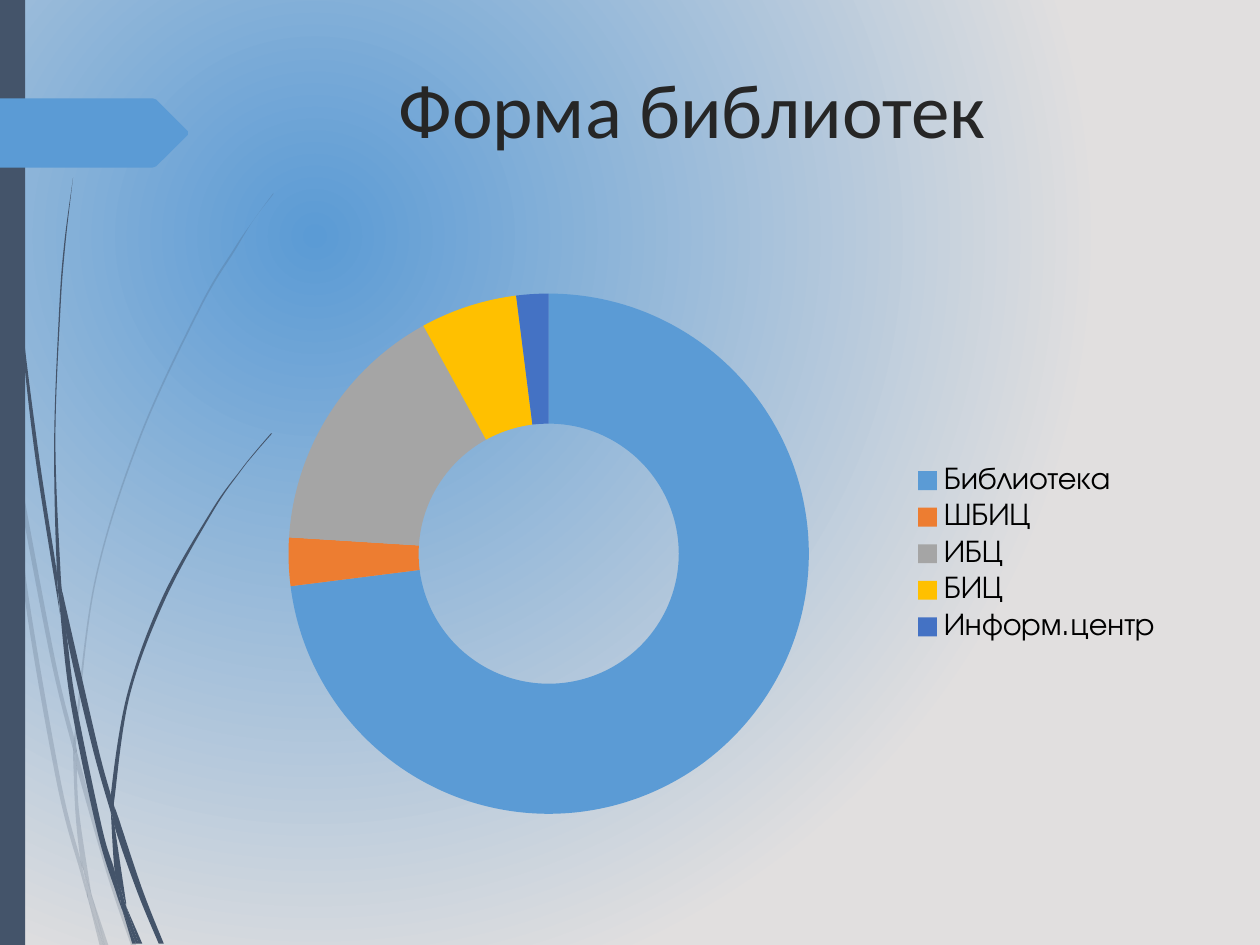
from dataclasses import dataclass

from lxml.etree import SubElement
from pptx import Presentation
from pptx.chart.data import CategoryChartData
from pptx.dml.color import RGBColor as RGB
from pptx.enum.chart import XL_CHART_TYPE as CT, XL_LEGEND_POSITION as LP
from pptx.enum.shapes import MSO_SHAPE as MS
from pptx.enum.text import MSO_ANCHOR as MA, PP_ALIGN as PA
from pptx.oxml.ns import qn
from pptx.util import Inches, Pt

Point = tuple[float, float]

COLORS = {
    "blue": "5B9BD5",
    "pale": "E1DFDF",
    "slate": "44546A",
    "title": "262626",
    "legend": "000000",
    "orange": "ED7D31",
    "gray": "A5A5A5",
    "gold": "FFC000",
    "indigo": "4472C4",
}


@dataclass
class Blade:
    down: list[Point]
    back: list[Point]


@dataclass
class Slice:
    name: str
    value: int
    color: str


FAINT_BLADES = [
    Blade([(0.08, 3.5), (0.06, 3.22), (0, 2.82)], [(0, 2.99), (0.07, 3.44), (0.08, 3.5)]),
    Blade([(0.12, 3.76), (0.4, 5.22), (0.59, 5.99)], [(0.59, 5.86), (0.43, 5.2), (0.1, 3.45)]),
    Blade([(0.61, 6.1), (0.85, 6.94), (1.04, 7.5)],
          [(1.08, 7.5), (0.88, 6.92), (0.64, 6.07), (0.61, 5.96)]),
    Blade([(0.73, 7.11), (0.83, 7.5)], [(0.86, 7.5), (0.73, 7.11)]),
    Blade([(0.08, 3.5), (0.19, 4.7), (0.45, 6.21), (0.64, 6.93), (0.7, 7.14)],
          [(0.7, 7.14), (0.69, 7.07), (0.64, 6.83), (0.48, 6.19), (0.22, 4.69), (0.12, 3.76), (0.08, 3.5)]),
    Blade([(0.58, 5.99), (0.6, 6.46), (0.64, 6.83), (0.67, 6.92), (0.73, 7.11)],
          [(0.73, 7.11), (0.72, 7.06), (0.63, 6.46), (0.61, 6.1), (0.61, 6.08), (0.58, 5.99)]),
    Blade([(0.61, 5.96), (0.61, 5.84), (0.76, 4.62), (1.11, 3.49), (1.59, 2.45), (1.87, 1.98), (2.01, 1.75),
           (2.17, 1.54)],
          [(2.17, 1.53), (2.01, 1.75), (1.86, 1.97), (1.58, 2.44), (1.1, 3.48), (0.75, 4.61), (0.59, 5.84),
           (0.59, 5.86), (0.61, 5.96)]),
    Blade([(0.7, 7.14), (0.79, 7.5)], [(0.82, 7.5), (0.7, 7.14)]),
    Blade([(0.61, 6.08), (0.61, 6.1), (0.61, 5.96), (0.59, 5.86)], [(0.58, 5.99), (0.61, 6.08)]),
    Blade([(0.65, 6.83), (0.69, 7.07), (0.7, 7.14), (0.82, 7.5)],
          [(0.83, 7.5), (0.73, 7.11), (0.67, 6.92), (0.65, 6.83)]),
]

SOLID_BLADES = [
    Blade([(0.03, 0.48), (0.05, 1.1), (0.14, 2.33), (0.27, 3.55), (0.46, 4.77), (0.47, 4.81)],
          [(0.45, 4.57), (0.45, 4.53), (0.3, 3.55), (0.15, 2.32), (0.06, 1.09), (0.04, 0.48), (0.03, 0),
           (0.02, 0)]),
    Blade([(0.5, 4.72), (0.53, 5.05), (0.73, 5.92), (0.88, 6.45)],
          [(0.88, 6.33), (0.88, 6.31), (0.77, 5.9), (0.5, 4.72)]),
    Blade([(0.91, 6.41), (0.91, 6.56), (1.09, 7.08), (1.26, 7.49)],
          [(1.3, 7.49), (1.13, 7.06), (0.94, 6.49), (0.91, 6.41)]),
    Blade([(0.47, 4.77), (0.56, 5.57), (0.77, 6.59), (0.92, 7.08), (0.97, 7.22)],
          [(0.96, 7.17), (0.91, 6.91), (0.81, 6.57), (0.6, 5.56), (0.53, 5.05), (0.47, 4.77)]),
    Blade([(0.5, 4.72), (0.48, 4.53), (0.44, 3.49), (0.48, 2.45), (0.52, 1.93), (0.58, 1.41)],
          [(0.58, 1.41), (0.51, 1.93), (0.47, 2.45), (0.43, 3.49), (0.45, 4.49), (0.49, 4.72), (0.5, 4.72)]),
    Blade([(1, 7.19), (1.1, 7.49)], [(1.13, 7.49), (1, 7.19)]),
    Blade([(0.45, 4.53), (0.47, 4.77), (0.53, 5.05)],
          [(0.53, 5.05), (0.5, 4.72), (0.49, 4.72), (0.45, 4.49)]),
    Blade([(0.91, 6.41), (0.91, 6.33), (1.03, 5.52), (1.31, 4.76), (1.69, 4.06), (1.91, 3.74), (2.03, 3.59),
           (2.16, 3.44)],
          [(2.15, 3.44), (2.03, 3.58), (1.91, 3.73), (1.68, 4.05), (1.29, 4.74), (1.01, 5.51), (0.88, 6.31),
           (0.91, 6.41)]),
    Blade([(0.97, 7.22), (1.05, 7.49)], [(1.08, 7.49), (0.97, 7.22)]),
    Blade([(0.88, 6.45), (0.91, 6.91), (0.96, 7.06), (1, 7.19)],
          [(1, 7.16), (0.91, 6.56), (0.9, 6.51), (0.88, 6.45)]),
    Blade([(0.88, 6.45), (0.9, 6.51), (0.91, 6.56)], [(0.91, 6.41), (0.88, 6.31), (0.88, 6.33), (0.88, 6.45)]),
    Blade([(0.91, 6.91), (0.96, 7.17), (0.97, 7.22), (1.08, 7.49)],
          [(1.1, 7.49), (1, 7.19), (0.96, 7.06), (0.91, 6.91)]),
]

ARROW = [(1.49, 1.07), (1.24, 1.32), (1.21, 1.33), (0, 1.33), (0, 0.78),
         (1.21, 0.78), (1.24, 0.79), (1.49, 1.04)]

SLICES = [
    Slice("Библиотека", 73, "blue"),
    Slice("ШБИЦ", 3, "orange"),
    Slice("ИБЦ", 16, "gray"),
    Slice("БИЦ", 6, "gold"),
    Slice("Информ.центр", 2, "indigo"),
]


def rgb(name: str) -> RGB:
    return RGB.from_string(COLORS[name])


def set_attrs(obj, values: dict) -> None:
    for key, value in values.items():
        setattr(obj, key, value)


def paint(sp, color: str, alpha: int = 100) -> None:
    sp.shadow.inherit = False
    sp.fill.solid()
    sp.fill.fore_color.rgb = rgb(color)
    sp.line.fill.background()
    if alpha < 100:
        clr = sp._element.spPr.find(".//" + qn("a:srgbClr"))
        SubElement(clr, qn("a:alpha"), val=str(alpha * 1000))


def add_outline(slide, points: list[Point]):
    pts = [(Inches(x), Inches(y)) for x, y in points]
    fb = slide.shapes.build_freeform(*pts[0])
    fb.add_line_segments(pts[1:], close=True)
    return fb.convert_to_shape()


def curve(side: list[Point]) -> list[Point]:
    ends = [side[0], *side, side[-1]]
    pts = []
    for a, b, c, d in zip(ends, ends[1:], ends[2:], ends[3:]):
        pts.append(tuple(b[k] + (c[k] - a[k]) / 6 for k in (0, 1)))
        pts.append(tuple(c[k] - (d[k] - b[k]) / 6 for k in (0, 1)))
        pts.append(c)
    return pts


def draw_blade(slide, blade: Blade, alpha: int) -> None:
    joint = [blade.down[-1], blade.back[0], blade.back[0]]
    if blade.down[-1] == blade.back[0]:
        joint = []
    sp = add_outline(slide, [blade.down[0], *curve(blade.down), *joint, *curve(blade.back)])
    lines = list(sp._element.iter(qn("a:lnTo")))
    for trio in zip(lines[::3], lines[1::3], lines[2::3]):
        bezier = trio[0].makeelement(qn("a:cubicBezTo"))
        trio[0].addprevious(bezier)
        for line in trio:
            bezier.append(line[0])
            line.getparent().remove(line)
    paint(sp, "slate", alpha)


def draw_background(slide) -> None:
    fill = slide.background.fill
    fill.gradient()
    for stop, color in zip(fill.gradient_stops, ("blue", "pale")):
        stop.color.rgb = rgb(color)
    grad = slide.element.find(".//" + qn("a:gradFill"))
    grad.remove(grad.find(qn("a:lin")))
    radial = SubElement(grad, qn("a:path"), path="circle")
    SubElement(radial, qn("a:fillToRect"), l="50000", t="50000", r="100000", b="100000")


def draw_title(slide, text: str) -> None:
    sp = slide.shapes.title
    set_attrs(sp, {"left": Inches(2.13), "top": Inches(0.44), "width": Inches(6.73), "height": Inches(1.1)})
    tf = sp.text_frame
    set_attrs(tf, {"text": text, "vertical_anchor": MA.TOP, "word_wrap": True})
    p = tf.paragraphs[0]
    p.alignment = PA.CENTER
    r = p.runs[0]
    set_attrs(r.font, {"name": "Calibri", "size": Pt(44)})
    r.font.color.rgb = rgb("title")


def draw_chart(slide, slices: list[Slice]) -> None:
    data = CategoryChartData()
    data.categories = [s.name for s in slices]
    data.add_series("Series 1", [s.value for s in slices])
    chart = slide.shapes.add_chart(CT.DOUGHNUT, Inches(2.12), Inches(2.33), Inches(7.21), Inches(4.13), data).chart
    set_attrs(chart, {"has_title": False, "has_legend": True})
    set_attrs(chart.font, {"name": "TeX Gyre Adventor", "size": Pt(18)})
    chart.font.color.rgb = rgb("legend")
    set_attrs(chart.legend, {"position": LP.RIGHT, "include_in_layout": True})
    plot = chart.plots[0]
    set_attrs(plot, {"vary_by_categories": True, "has_data_labels": False})
    for i, s in enumerate(slices):
        fmt = plot.series[0].points[i].format
        fmt.fill.solid()
        fmt.fill.fore_color.rgb = rgb(s.color)
        fmt.line.fill.background()
    area = chart.element.find(".//" + qn("c:plotArea"))
    for old in area.findall(qn("c:layout")):
        area.remove(old)
    layout = SubElement(area, qn("c:layout"))
    area.insert(0, layout)
    manual = SubElement(layout, qn("c:manualLayout"))
    for tag, val in {"layoutTarget": "inner", "xMode": "edge", "yMode": "edge",
                     "x": "0.01", "y": "0", "w": "0.6", "h": "1"}.items():
        SubElement(manual, qn("c:" + tag), val=val)


prs = Presentation()
set_attrs(prs, {"slide_width": Inches(10), "slide_height": Inches(7.5)})
slide = prs.slides.add_slide(prs.slide_layouts[5])
draw_background(slide)
for blades, alpha in ((FAINT_BLADES, 20), (SOLID_BLADES, 100)):
    for blade in blades:
        draw_blade(slide, blade, alpha)
paint(slide.shapes.add_shape(MS.RECTANGLE, 0, 0, Inches(0.2), Inches(7.5)), "slate")
paint(add_outline(slide, ARROW), "blue")
draw_title(slide, "Форма библиотек")
draw_chart(slide, SLICES)
prs.save("out.pptx")
